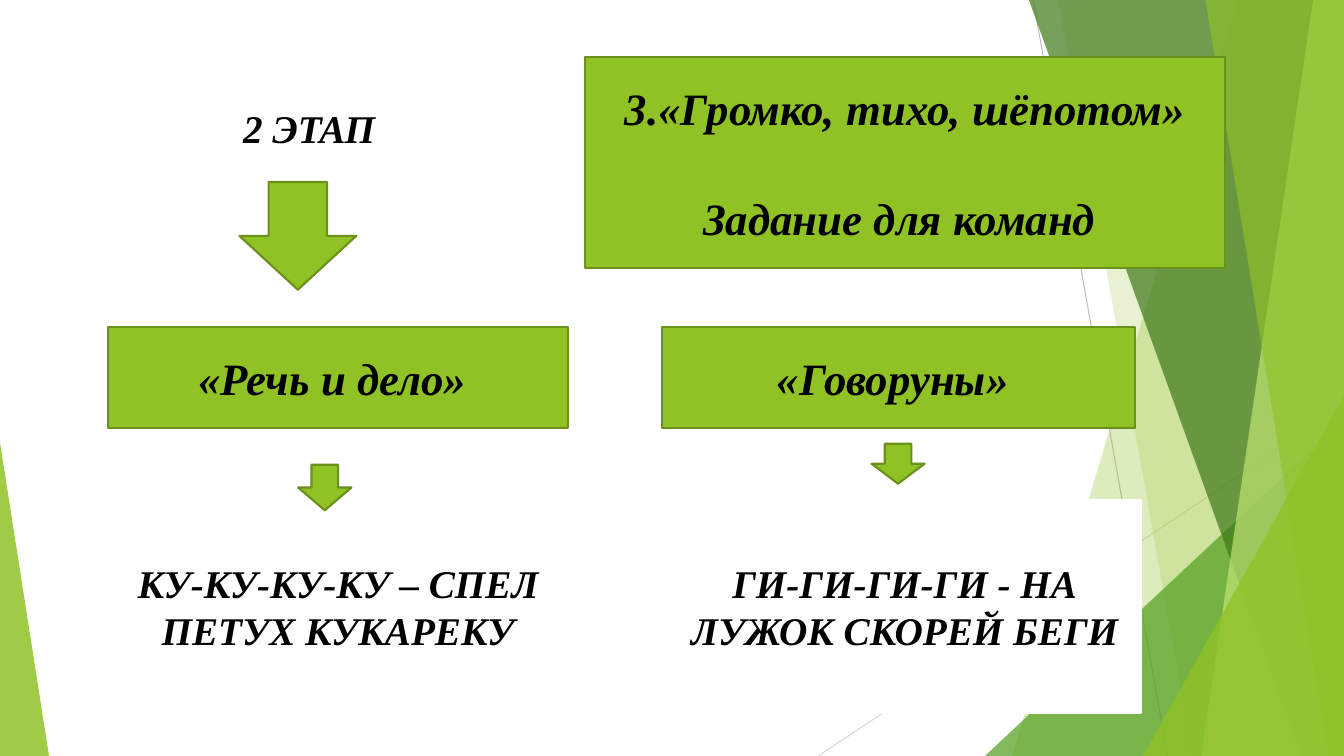
"""Build the slide with the second-stage speech task for two teams."""
from lxml import etree
from pptx import Presentation
from pptx.dml.color import RGBColor
from pptx.enum.shapes import MSO_CONNECTOR, MSO_SHAPE
from pptx.enum.text import MSO_ANCHOR, PP_ALIGN
from pptx.oxml.ns import qn
from pptx.util import Pt

STRAIGHT = MSO_CONNECTOR.STRAIGHT
RECTANGLE, ARROW = MSO_SHAPE.RECTANGLE, MSO_SHAPE.DOWN_ARROW
TRIANGLE = MSO_SHAPE.ISOSCELES_TRIANGLE
MIDDLE, CENTER = MSO_ANCHOR.MIDDLE, PP_ALIGN.CENTER

WIDTH, HEIGHT = 960, 540
THEME = {
    "font": "Times New Roman", "text": "000000", "heading": 32, "body": 28,
    "gap": 40, "border": 1.5, "hairline": 0.75,
    "paper": "FFFFFF", "green": "90C226", "edge": "6B901C",
    "leaf": "54A021", "forest": "3F7819", "lime": "C0E474",
    "grey": "BFBFBF", "silver": "D9D9D9",
}

RAYS = [((738, 0), (834, 540), "grey"), ((960, 290), (584.5, 540), "silver")]
FACETS = [
    ("slant", (884, 723), "green", 30),
    ("slant", (756, 852), "green", 20),
    ("triangle", (703.5, 256.5, 240, 1), "leaf", 72),
    ("slant", (735, 929.5), "forest", 70),
    ("slant", (938, 858), "lime", 70),
    ("slant", (861, 949), "green", 65),
    ("triangle", (816.5, 143.5, 257, 1), "green", 80),
    ("triangle", (0, 35, 224, 0), "green", 85),
]
BOXES = [
    ((132.5, 39, 176.5, 105), "body", ["2 ЭТАП"]),
    ((418, 41, 457, 150.5), "heading",
     ["3.«Громко, тихо, шёпотом»", "Задание для команд\u00a0"]),
    ((77, 357, 329, 152.5), "body", ["КУ-КУ-КУ-КУ – СПЕЛ ПЕТУХ КУКАРЕКУ"]),
    ((477.5, 357, 337.5, 152.5), "body", ["ГИ-ГИ-ГИ-ГИ - НА ЛУЖОК СКОРЕЙ БЕГИ"]),
    ((77, 233.5, 329, 72), "heading", ["«Речь и дело» "]),
    ((473, 233.5, 337.5, 72), "heading", ["«Говоруны» "]),
]
ARROWS = [(171, 130, 83.5, 77), (213, 332, 38, 32.5), (622.5, 317, 38, 28.5)]


def color(name):
    return RGBColor.from_string(THEME[name])


def paint(shape, fill, edge=None):
    shape.shadow.inherit = False
    shape.fill.solid()
    shape.fill.fore_color.rgb = color(fill)
    if edge:
        shape.line.color.rgb = color(edge)
        shape.line.width = Pt(THEME["border"])
    else:
        shape.line.fill.background()


def add_preset(page, kind, frame):
    return page.shapes.add_shape(kind, *(Pt(value) for value in frame))


def add_ray(page, start, end, shade):
    ray = page.shapes.add_connector(STRAIGHT, *(Pt(v) for v in start + end))
    ray.line.color.rgb = color(shade)
    ray.line.width = Pt(THEME["hairline"])
    etree.SubElement(ray._element.spPr, qn("a:effectLst"))


def add_facet(page, kind, geometry, fill, opacity):
    if kind == "slant":
        top, bottom = geometry
        outline = page.shapes.build_freeform(Pt(top), 0)
        corners = [(WIDTH, 0), (WIDTH, HEIGHT), (bottom, HEIGHT)]
        outline.add_line_segments([(Pt(x), Pt(y)) for x, y in corners])
        facet = outline.convert_to_shape()
    else:
        left, width, height, apex = geometry
        facet = add_preset(page, TRIANGLE, (left, HEIGHT - height, width, height))
        facet.adjustments[0] = apex
    paint(facet, fill)
    tint = facet._element.spPr.find(qn("a:solidFill"))[0]
    etree.SubElement(tint, qn("a:alpha"), val=str(opacity * 1000))


def add_box(page, frame, role, lines):
    box = add_preset(page, RECTANGLE, frame)
    if role == "heading":
        paint(box, "green", "edge")
    else:
        paint(box, "paper", "paper")
    text = box.text_frame
    text.word_wrap = True
    text.vertical_anchor = MIDDLE
    for index, line in enumerate(lines):
        para = text.add_paragraph() if index else text.paragraphs[0]
        para.alignment = CENTER
        if index:
            para.space_before = Pt(THEME["gap"])
        span = para.add_run()
        span.text = line
        span.font.name = THEME["font"]
        span.font.size = Pt(THEME[role])
        span.font.bold = span.font.italic = True
        span.font.color.rgb = color("text")


def main():
    deck = Presentation()
    deck.slide_width, deck.slide_height = Pt(WIDTH), Pt(HEIGHT)
    page = deck.slides.add_slide(deck.slide_layouts[6])
    for ray in RAYS:
        add_ray(page, *ray)
    for facet in FACETS:
        add_facet(page, *facet)
    for box in BOXES:
        add_box(page, *box)
    for frame in ARROWS:
        paint(add_preset(page, ARROW, frame), "green", "edge")
    deck.save("out.pptx")


if __name__ == "__main__":
    main()
